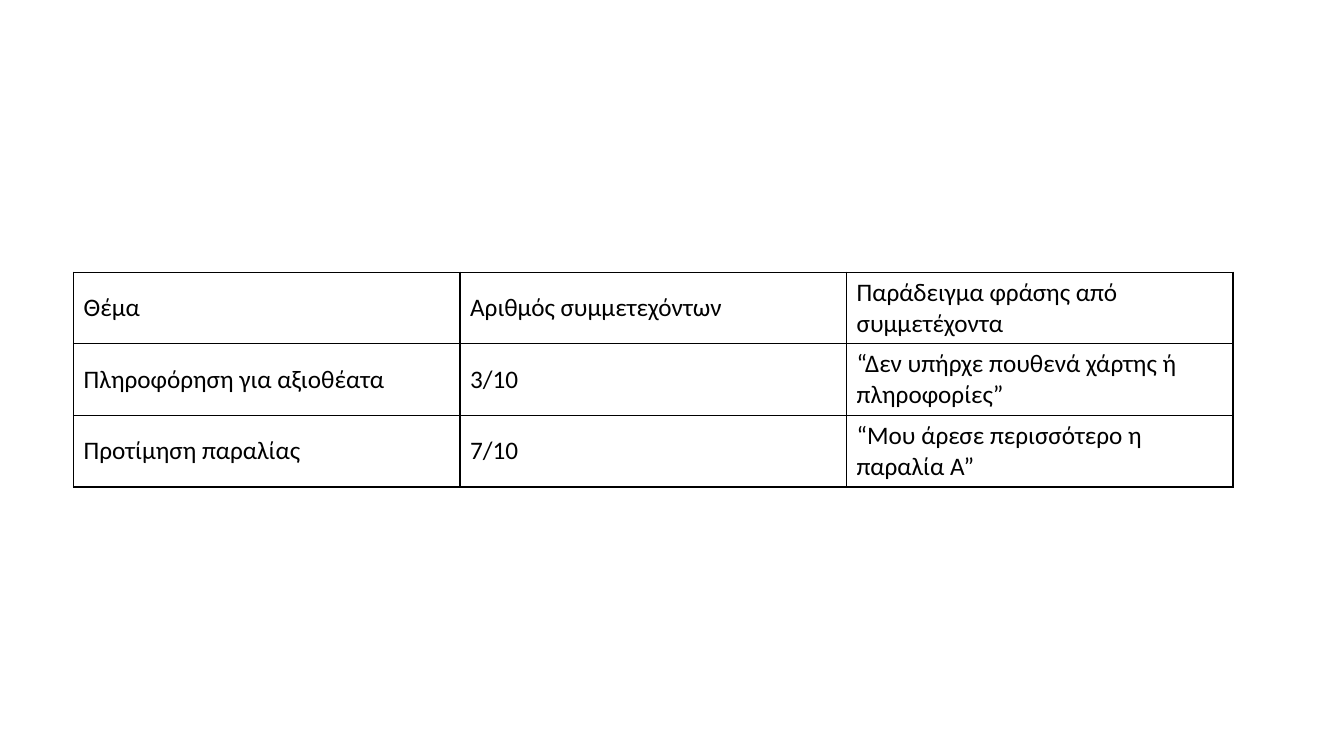
from dataclasses import dataclass

from lxml import etree
from pptx import Presentation
from pptx.dml.color import RGBColor
from pptx.enum import text
from pptx.oxml.ns import qn
from pptx.util import Inches, Pt

FINDINGS = [
    ("Θέμα", "Αριθμός συμμετεχόντων", "Παράδειγμα φράσης από συμμετέχοντα"),
    ("Πληροφόρηση για αξιοθέατα", "3/10", "“Δεν υπήρχε πουθενά χάρτης ή πληροφορίες”"),
    ("Προτίμηση παραλίας", "7/10", "“Μου άρεσε περισσότερο η παραλία Α”"),
]


@dataclass(frozen=True)
class Theme:
    font: str = "Calibri"
    size: int = 18
    ink: str = "000000"
    border: int = 1


THEME = Theme()
LEFT, TOP, WIDTH, ROW_HEIGHT = 0.73, 2.7, 11.5, 0.71


def add_borders(cell):
    properties = cell._tc.get_or_add_tcPr()
    for side in ("a:lnL", "a:lnR", "a:lnT", "a:lnB"):
        line = etree.SubElement(properties, qn(side), w=str(Pt(THEME.border)))
        fill = etree.SubElement(line, qn("a:solidFill"))
        etree.SubElement(fill, qn("a:srgbClr"), val=THEME.ink)


def fill_cell(cell, wording):
    add_borders(cell)  # the schema puts borders before the fill
    cell.fill.background()
    cell.vertical_anchor = text.MSO_ANCHOR.MIDDLE
    run = cell.text_frame.paragraphs[0].add_run()
    run.text = wording
    run.font.name = THEME.font
    run.font.size = Pt(THEME.size)
    run.font.bold = False
    run.font.color.rgb = RGBColor.from_string(THEME.ink)


def add_findings(slide):
    row_count, column_count = len(FINDINGS), len(FINDINGS[0])
    table = slide.shapes.add_table(
        row_count, column_count, Inches(LEFT), Inches(TOP),
        Inches(WIDTH), Inches(ROW_HEIGHT * row_count),
    ).table
    table.first_row = False
    table.horz_banding = False
    for row, finding in zip(table.rows, FINDINGS):
        for cell, wording in zip(row.cells, finding):
            fill_cell(cell, wording)


def main():
    deck = Presentation()
    deck.slide_width, deck.slide_height = Inches(13.33), Inches(7.5)
    blank_layout = deck.slide_layouts[6]
    add_findings(deck.slides.add_slide(blank_layout))
    deck.save("out.pptx")


if __name__ == "__main__":
    main()
